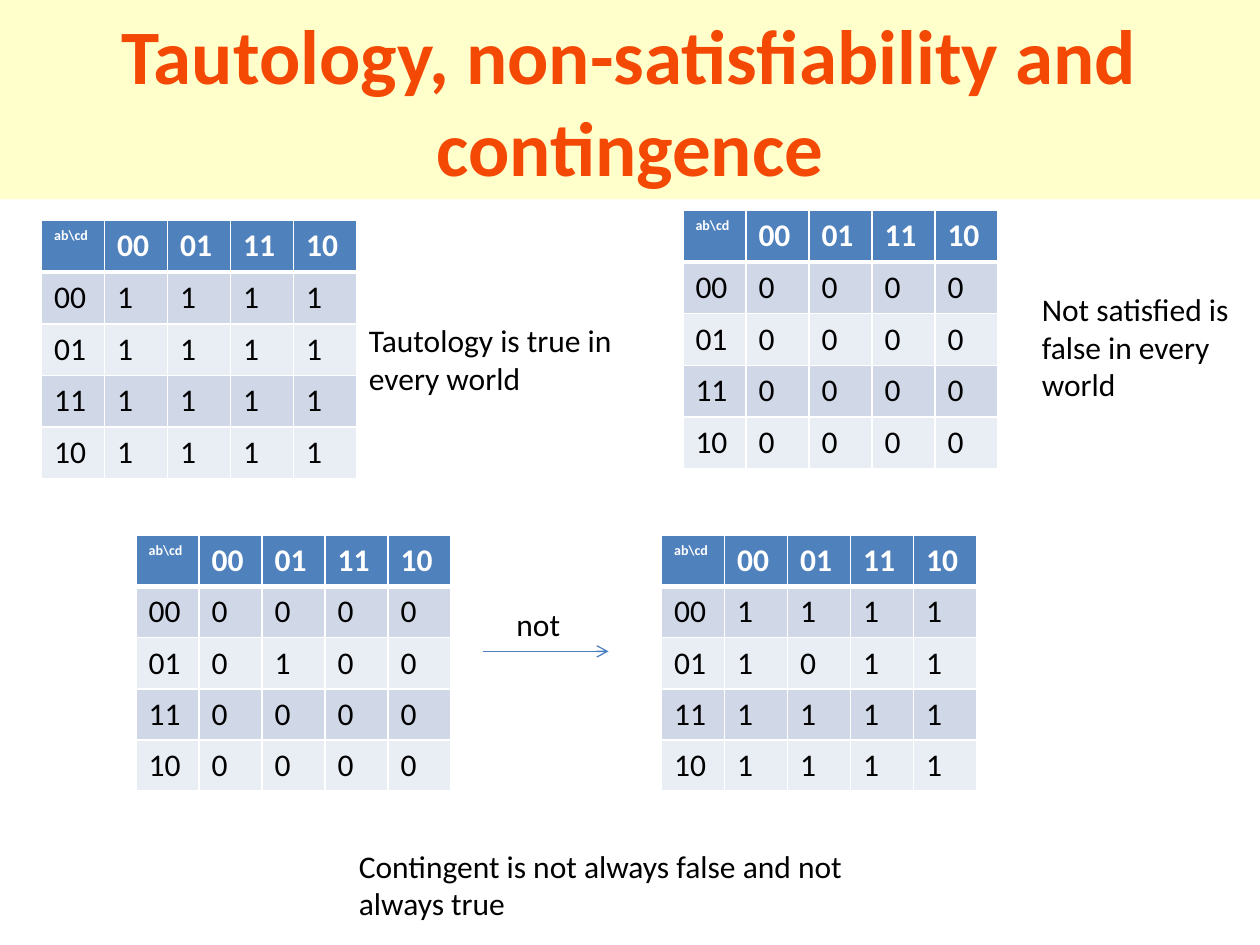
from lxml import etree
from pptx import Presentation
from pptx.dml.color import RGBColor
from pptx.enum import shapes, text
from pptx.oxml import ns
from pptx.util import Inches, Pt

WHITE = RGBColor(0xFF, 0xFF, 0xFF)
BLACK = RGBColor(0, 0, 0)
CREAM = RGBColor(0xFF, 0xFF, 0xCC)
ORANGE = RGBColor(0xF3, 0x49, 0x05)
HEADER_BLUE = RGBColor(0x4F, 0x81, 0xBD)
ARROW_BLUE = RGBColor(0x4B, 0x7E, 0xBC)
BANDS = (RGBColor(0xD0, 0xD8, 0xE8), RGBColor(0xE9, 0xED, 0xF4))

TITLE = "Tautology, non-satisfiability and contingence"
CORNER = "ab\\cd"
GRAY_CODE = ["00", "01", "11", "10"]
COLUMN_WIDTH = 0.5

# left, top, row height, values by row
MAPS = [
    (0.33, 1.75, 0.41, ["1111", "1111", "1111", "1111"]),
    (5.42, 1.67, 0.41, ["0000", "0000", "0000", "0000"]),
    (1.08, 4.25, 0.4, ["0000", "0100", "0000", "0000"]),
    (5.25, 4.25, 0.4, ["1111", "1011", "1111", "1111"]),
]
# left, top, width, height, wording
NOTES = [
    (2.83, 2.5, 2.58, 0.71, "Tautology is true in every world"),
    (8.17, 2.25, 1.83, 1.01, "Not satisfied is false in every world"),
    (4, 4.75, 0.75, 0.4, "not"),
    (2.75, 6.67, 4.5, 0.71,
     "Contingent is not always false and not always true"),
]
ARROW = (3.83, 5.17, 4.83, 5.17)


def write(frame, wording, size=18, color=BLACK, bold=False):
    span = frame.paragraphs[0].add_run()
    span.text = wording
    span.font.color.rgb = color
    formats = {"name": "Calibri", "size": Pt(size), "bold": bold}
    for name, value in formats.items():
        setattr(span.font, name, value)


def set_borders(cell, top=1, bottom=1):
    """Draw white cell borders; widths are in points."""
    properties = cell._tc.get_or_add_tcPr()
    widths = {"lnL": 1, "lnR": 1, "lnT": top, "lnB": bottom}
    for index, (side, width) in enumerate(widths.items()):
        line = etree.Element(ns.qn(f"a:{side}"), w=str(Pt(width)))
        fill = etree.SubElement(line, ns.qn("a:solidFill"))
        etree.SubElement(fill, ns.qn("a:srgbClr"), val=str(WHITE))
        properties.insert(index, line)


def add_map(page, left, top, row_height, values):
    rows = [[CORNER] + GRAY_CODE]
    rows += [[code, *bits] for code, bits in zip(GRAY_CODE, values)]
    count = len(rows)
    table = page.shapes.add_table(
        count, count, Inches(left), Inches(top),
        Inches(count * COLUMN_WIDTH), Inches(count * row_height)).table
    for column in table.columns:
        column.width = Inches(COLUMN_WIDTH)
    for r, row in enumerate(rows):
        table.rows[r].height = Inches(row_height)
        for c, wording in enumerate(row):
            cell = table.cell(r, c)
            header = r == 0
            cell.fill.solid()
            cell.fill.fore_color.rgb = HEADER_BLUE if header else BANDS[(r - 1) % 2]
            set_borders(cell, top=3 if r == 1 else 1, bottom=3 if header else 1)
            write(cell.text_frame, wording, 8 if wording == CORNER else 18,
                  WHITE if header else BLACK, header)


def add_title(page):
    banner = page.shapes.add_shape(
        shapes.MSO_SHAPE.RECTANGLE, 0, 0, Inches(10), Inches(1.58))
    banner.shadow.inherit = False
    banner.fill.solid()
    banner.fill.fore_color.rgb = CREAM
    banner.line.fill.background()
    banner.text_frame.word_wrap = True
    banner.text_frame.paragraphs[0].alignment = text.PP_ALIGN.CENTER
    write(banner.text_frame, TITLE, 44, ORANGE, True)


def add_note(page, left, top, width, height, wording):
    box = page.shapes.add_textbox(*map(Inches, (left, top, width, height)))
    box.text_frame.word_wrap = True
    write(box.text_frame, wording)


def add_arrow(page):
    arrow = page.shapes.add_connector(
        shapes.MSO_CONNECTOR.STRAIGHT, *map(Inches, ARROW))
    arrow.line.color.rgb = ARROW_BLUE
    arrow.line.width = Pt(0.75)
    etree.SubElement(arrow.line._get_or_add_ln(), ns.qn("a:tailEnd"), type="arrow")
    etree.SubElement(arrow._element.spPr, ns.qn("a:effectLst"))


def main():
    deck = Presentation()
    deck.slide_width, deck.slide_height = Inches(10), Inches(7.5)
    page = deck.slides.add_slide(deck.slide_layouts[6])
    add_title(page)
    for truth_map in MAPS:
        add_map(page, *truth_map)
    add_arrow(page)
    for note in NOTES:
        add_note(page, *note)
    deck.save("out.pptx")


if __name__ == "__main__":
    main()
